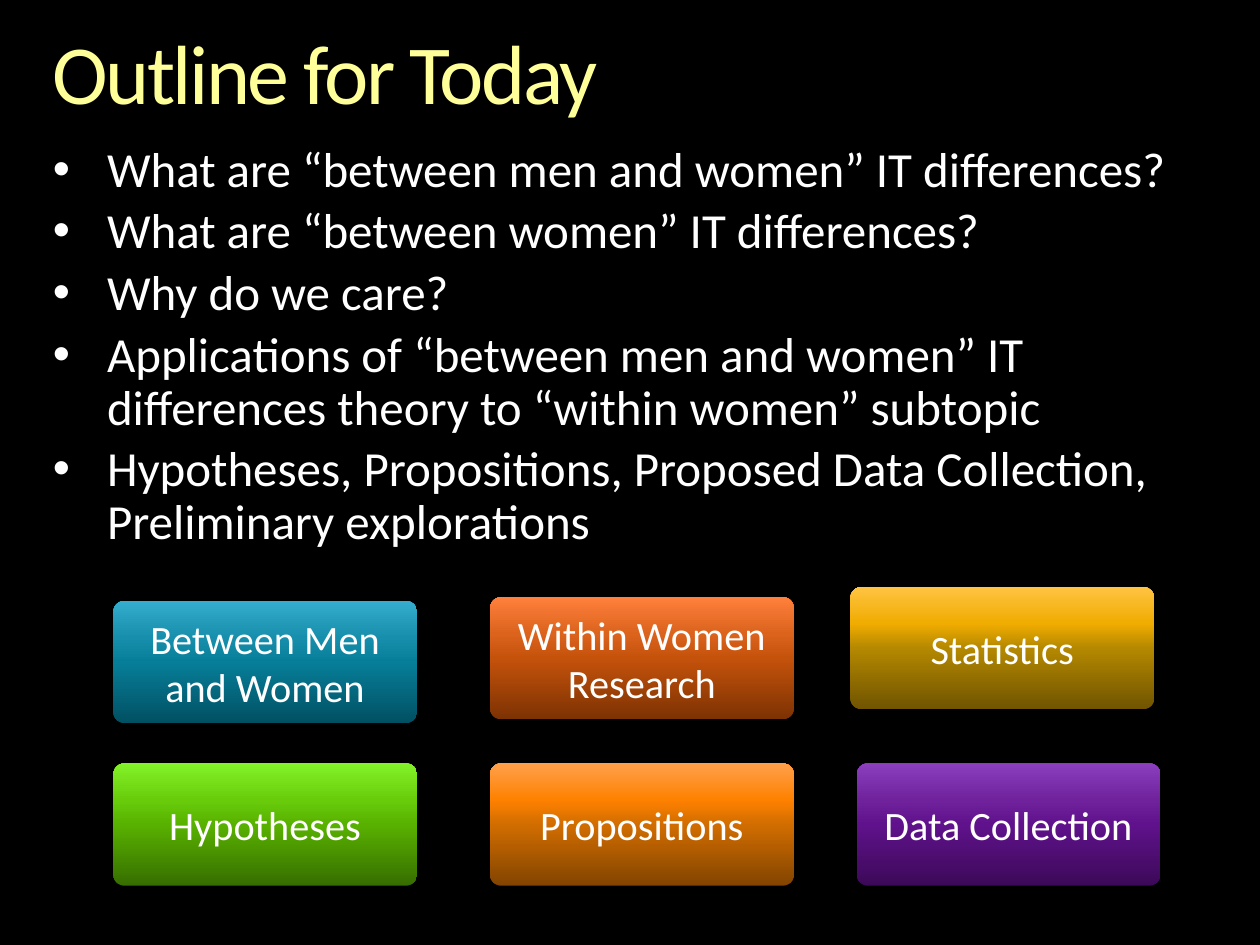
from lxml import etree
from pptx import Presentation
from pptx import util as u
from pptx.dml.color import RGBColor
from pptx.enum import shapes, text
from pptx.oxml import parse_xml
from pptx.oxml.ns import nsdecls, qn

FONT = "Calibri"
COLORS = {"background": "000000", "text": "FFFFFF", "shadow": "000000"}
TITLE_STOPS = {0: "FFFFB9", 36: "FFFF99", 86: "F6AE1E"}

# Button gradients, from the bottom edge to the top edge
STOPS = (0, 50, 70, 100)
GRADIENTS = {
    "teal": ("015062", "077E99", "178EAB", "35ADCE"),
    "rust": ("7D3203", "C4520B", "DB631C", "FF803C"),
    "gold": ("705400", "B48800", "F0AC00", "FFC342"),
    "green": ("376E00", "58B100", "68CC0B", "83F229"),
    "orange": ("824400", "D16D00", "FE8100", "FFA04B"),
    "purple": ("3C0958", "5F128B", "6F229C", "8B3FBD"),
}

BULLETS = [
    "What are “between men and women” IT differences?",
    "What are “between women” IT differences?",
    "Why do we care?",
    "Applications of “between men and women” IT differences theory to “within women” subtopic",
    "Hypotheses, Propositions, Proposed Data Collection, Preliminary explorations",
]

# Label, gradient, left, top
BUTTONS = [
    ("Between Men and Women", "teal", 0.9, 4.77),
    ("Within Women Research", "rust", 3.89, 4.74),
    ("Statistics", "gold", 6.75, 4.66),
    ("Hypotheses", "green", 0.9, 6.06),
    ("Propositions", "orange", 3.89, 6.06),
    ("Data Collection", "purple", 6.8, 6.06),
]
BUTTON_SIZE = (2.41, 0.97)


def rgb(name):
    return RGBColor.from_string(COLORS[name])


def gradient(stops, angle):
    gs = "".join(f'<a:gs pos="{pos * 1000}"><a:srgbClr val="{color}"/></a:gs>'
                 for pos, color in stops.items())
    return parse_xml(f'<a:gradFill {nsdecls("a")}><a:gsLst>{gs}</a:gsLst>'
                     f'<a:lin ang="{angle * 60000}" scaled="0"/></a:gradFill>')


def add_shadow(sp):
    sp.shadow.inherit = False
    effects = sp._element.spPr.find(qn("a:effectLst"))
    effects.append(parse_xml(
        f'<a:outerShdw {nsdecls("a")} blurRad="{u.Pt(5)}" dist="{u.Pt(3)}" '
        f'dir="5400000" rotWithShape="0"><a:srgbClr val="{COLORS["shadow"]}">'
        '<a:alpha val="45000"/></a:srgbClr></a:outerShdw>'))


def style(font, size):
    font.name, font.size = FONT, u.Pt(size)


def add_text_box(s, box):
    tf = s.shapes.add_textbox(*map(u.Inches, box)).text_frame
    tf.word_wrap = True
    tf.margin_left = tf.margin_right = tf.margin_top = tf.margin_bottom = 0
    return tf


def add_title(s, box, title):
    p = add_text_box(s, box).paragraphs[0]
    p.text = title
    p.line_spacing = 0.9
    r = p.runs[0]
    style(r.font, 48)
    rPr = r.font._element
    rPr.set("spc", "-150")
    rPr.insert(0, gradient(TITLE_STOPS, 90))


def add_bullets(s, box, items):
    tf = add_text_box(s, box)
    tf.text = "\n".join(items)
    for i, p in enumerate(tf.paragraphs):
        pPr = p._p.get_or_add_pPr()
        pPr.set("marL", str(u.Inches(0.43)))
        pPr.set("indent", str(-u.Inches(0.43)))
        etree.SubElement(pPr, qn("a:buFont"), typeface="Arial")
        etree.SubElement(pPr, qn("a:buChar"), char="•")
        p.line_spacing = 0.9
        if i:
            p.space_before = u.Pt(5)
        style(p.runs[0].font, 28)
        p.runs[0].font.color.rgb = rgb("text")


def add_button(s, box, label, colors):
    sp = s.shapes.add_shape(shapes.MSO_SHAPE.ROUNDED_RECTANGLE, *map(u.Inches, box))
    sp.adjustments[0] = 0.09
    sp.line.fill.background()
    spPr = sp._element.spPr
    spPr.insert(2, gradient(dict(zip(STOPS, colors)), 270))
    add_shadow(sp)
    tf = sp.text_frame
    tf.word_wrap = True
    tf.vertical_anchor = text.MSO_ANCHOR.MIDDLE
    p = tf.paragraphs[0]
    p.text = label
    p.alignment = text.PP_ALIGN.CENTER
    style(p.runs[0].font, 23)
    p.runs[0].font.color.rgb = rgb("text")


def main():
    prs = Presentation()
    prs.slide_width, prs.slide_height = u.Inches(10), u.Inches(7.5)
    s = prs.slides.add_slide(prs.slide_layouts[6])
    s.background.fill.solid()
    s.background.fill.fore_color.rgb = rgb("background")

    # Heading and outline
    add_title(s, (0.42, 0.25, 9.17, 0.73), "Outline for Today")
    add_bullets(s, (0.42, 1.15, 9.17, 3.35), BULLETS)

    # Topic buttons
    for label, color, left, top in BUTTONS:
        add_button(s, (left, top, *BUTTON_SIZE), label, GRADIENTS[color])

    prs.save("out.pptx")


if __name__ == "__main__":
    main()
